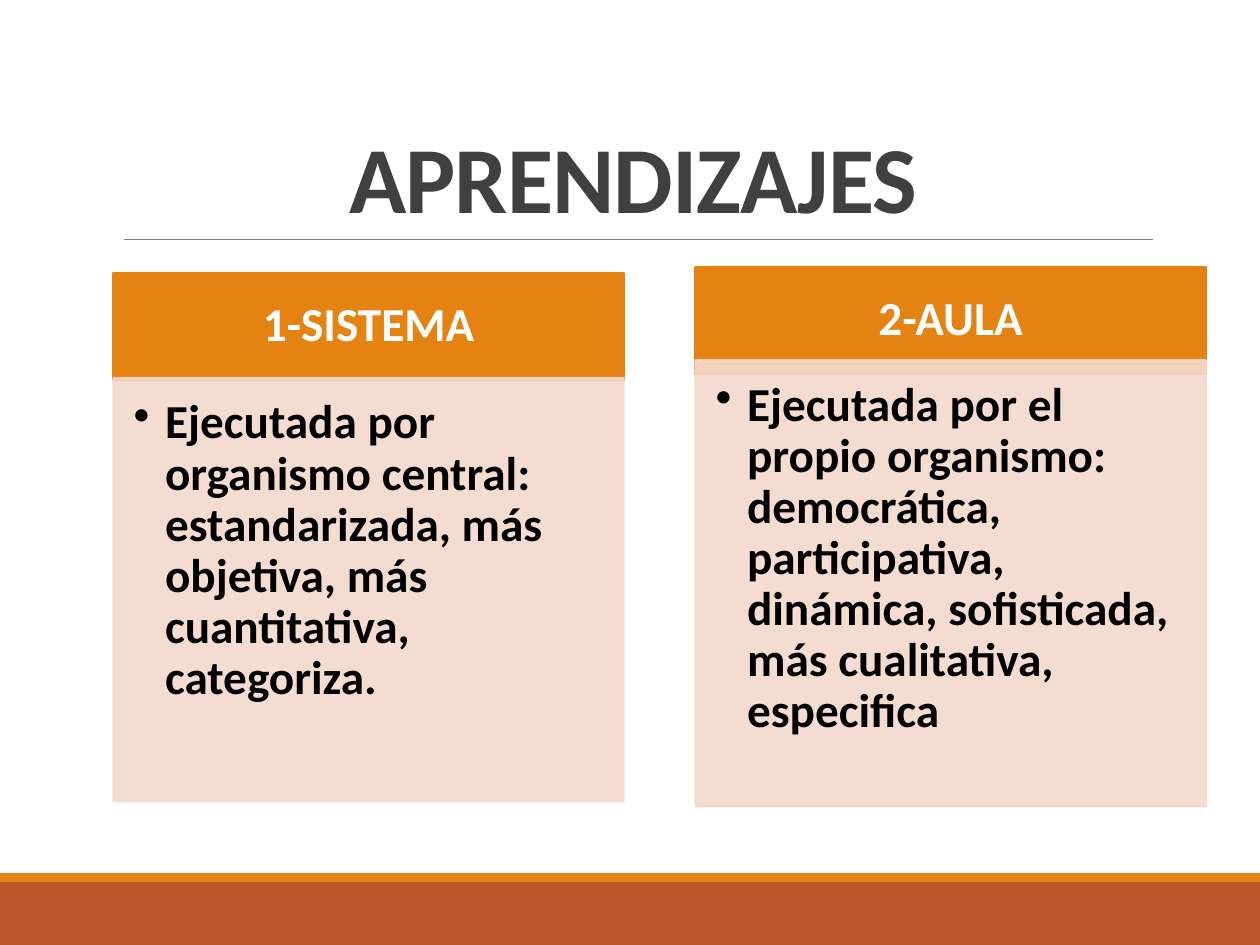
from pptx import Presentation
from pptx.dml.color import RGBColor
from pptx.enum.shapes import MSO_CONNECTOR as Link, MSO_SHAPE as Shape
from pptx.enum.text import MSO_ANCHOR as Anchor, PP_ALIGN as Align
from pptx.oxml.ns import qn
from pptx.util import Pt
from lxml.etree import SubElement as sub

RUST = RGBColor(0xBD, 0x58, 0x2C)
ORANGE = RGBColor(0xE4, 0x83, 0x12)
PINK = RGBColor(0xF5, 0xD9, 0xCC)
GREY = RGBColor(0x80, 0x80, 0x80)
DARK = RGBColor(0x40, 0x40, 0x40)
WHITE = RGBColor(0xFF, 0xFF, 0xFF)
BLACK = RGBColor(0, 0, 0)

WIDE, HIGH = 720, 540
COL_W, HEAD_H = 291.6, 61.2

# Left, head top, body top, body height, heading, text
COLS = [
    (64.8, 156, 216, 241.9, "1-SISTEMA",
     "Ejecutada por organismo central: estandarizada, más objetiva, "
     "más cuantitativa, categoriza."),
    (397.4, 152.4, 205.9, 254.9, "2-AULA",
     "Ejecutada por el propio organismo: democrática, participativa, "
     "dinámica, sofisticada, más cualitativa, especifica"),
]


def add_rect(slide, box, fill, line=False):
    rect = slide.shapes.add_shape(Shape.RECTANGLE, *map(Pt, box))
    rect.shadow.inherit = False
    rect.fill.solid()
    rect.fill.fore_color.rgb = fill
    if line:
        rect.line.color.rgb = fill
        rect.line.width = Pt(1.25)
    else:
        rect.line.fill.background()
    return rect


def set_text(shape, text, size, color, align, anchor, pads, gap=0.9):
    frame = shape.text_frame
    frame.word_wrap = True
    frame.vertical_anchor = anchor
    (frame.margin_left, frame.margin_top,
     frame.margin_right, frame.margin_bottom) = map(Pt, pads)
    para = frame.paragraphs[0]
    para.text = text
    para.alignment = align
    para.line_spacing = gap
    font = para.font
    font.name, font.size, font.bold = "Calibri", Pt(size), True
    font.color.rgb = color
    return para


def fade(shape, share):
    for tag in shape._element.spPr.iter(qn("a:srgbClr")):
        sub(tag, qn("a:alpha"), val=str(share * 1000))


def add_bullet(para, indent):
    props = para._p.get_or_add_pPr()
    props.set("marL", str(Pt(indent)))
    props.set("indent", str(-Pt(indent)))
    mark = props.makeelement(qn("a:buChar"), {"char": "•"})
    props.insert_element_before(mark, "a:tabLst", "a:defRPr", "a:extLst")


def add_footer(slide, left, top, width, height):
    stripe = 5
    add_rect(slide, (left, top + stripe, width, height - stripe), RUST)
    add_rect(slide, (left, top, width, stripe), ORANGE)


def add_title(slide, left, top, width, height):
    box = slide.shapes.add_textbox(*map(Pt, (left, top, width, height)))
    para = set_text(box, "APRENDIZAJES", 54, DARK, Align.CENTER,
                    Anchor.BOTTOM, (7.2, 3.6, 7.2, 3.6), 0.85)
    para.runs[0]._r.get_or_add_rPr().set("spc", "-50")
    # Rule under the title
    base = Pt(top + height)
    rule = slide.shapes.add_connector(
        Link.STRAIGHT, Pt(left + 5.8), base, Pt(left + width), base)
    rule.line.color.rgb = GREY
    rule.line.width = Pt(0.5)
    sub(rule._element.spPr, qn("a:effectLst"))


def add_column(slide, left, top, low, height, name, text):
    # Heading
    head = add_rect(slide, (left, top, COL_W, HEAD_H), ORANGE, True)
    set_text(head, name, 27, WHITE, Align.CENTER, Anchor.MIDDLE,
             (15, 8.6, 15, 8.6))
    # Body
    body = add_rect(slide, (left, low, COL_W, height), PINK, True)
    fade(body, 90)
    para = set_text(body, text, 27, BLACK, Align.LEFT, Anchor.TOP,
                    (11.5, 11.5, 15, 17.3))
    add_bullet(para, 18)


def main():
    deck = Presentation()
    deck.slide_width, deck.slide_height = Pt(WIDE), Pt(HIGH)
    slide = deck.slides.add_slide(deck.slide_layouts[6])
    add_footer(slide, 0, 499, WIDE, 41)
    add_title(slide, 64.8, 22.3, 594, 114.5)
    for col in COLS:
        add_column(slide, *col)
    deck.save("out.pptx")


if __name__ == "__main__":
    main()
